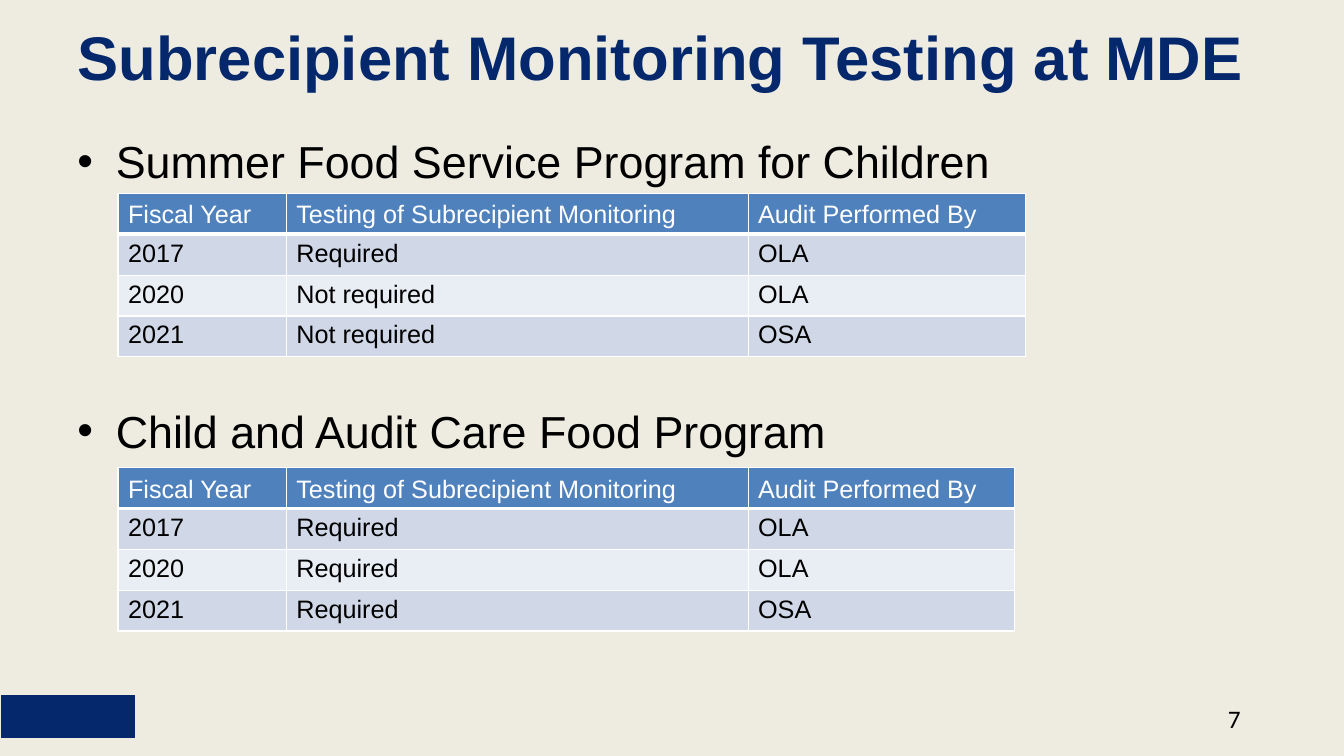
import pptx
import pptx.dml.color
import pptx.enum.shapes
import pptx.enum.text
import pptx.oxml
import pptx.oxml.ns
import pptx.util

EMU_PER_PX = 9144  # 100 px to the inch
ANCHOR = pptx.enum.text.MSO_ANCHOR

HEADER = ("Fiscal Year", "Testing of Subrecipient Monitoring", "Audit Performed By")
SUMMER_ROWS = [
    HEADER,
    ("2017", "Required", "OLA"),
    ("2020", "Not required", "OLA"),
    ("2021", "Not required", "OSA"),
]
CHILD_CARE_ROWS = [
    HEADER,
    ("2017", "Required", "OLA"),
    ("2020", "Required", "OLA"),
    ("2021", "Required", "OSA"),
]


def px(length):
    return pptx.util.Emu(length * EMU_PER_PX)


def color(value):
    return pptx.dml.color.RGBColor.from_string(value)


def xml(tag, content="", **attributes):
    """Parse one DrawingML element."""
    listed = "".join(f' {name}="{value}"' for name, value in attributes.items())
    namespace = pptx.oxml.ns.nsdecls("a")
    return pptx.oxml.parse_xml(f"<a:{tag} {namespace}{listed}>{content}</a:{tag}>")


def write(para, text, size=18, font="Arial", ink="000000", bold=False):
    span = para.add_run()
    span.text = text
    span.font.size = pptx.util.Pt(size)
    span.font.name = font
    span.font.bold = bold
    span.font.color.rgb = color(ink)


class Page:
    navy, paper, white = "04286B", "EEECE1", "FFFFFF"
    header_fill, bands = "4F81BD", ("E9EDF4", "D0D8E8")

    def __init__(self, deck):
        self.slide = deck.slides.add_slide(deck.slide_layouts[5])
        self.slide.background.fill.solid()
        self.slide.background.fill.fore_color.rgb = color(self.paper)

    def title(self, text, left, top, width, height):
        box = self.slide.shapes.title
        box.left, box.top, box.width, box.height = map(px, (left, top, width, height))
        frame = box.text_frame
        frame.auto_size = pptx.enum.text.MSO_AUTO_SIZE.NONE
        frame.vertical_anchor = ANCHOR.MIDDLE
        para = frame.paragraphs[0]
        para.alignment = pptx.enum.text.PP_ALIGN.LEFT
        write(para, text, size=44, ink=self.navy, bold=True)

    def text_frame(self, left, top, width, height):
        box = self.slide.shapes.add_textbox(*map(px, (left, top, width, height)))
        box.text_frame.word_wrap = True
        return box.text_frame

    def bullets(self, items, *place):
        """Write (text, points of space before) pairs as one bulleted list."""
        frame = self.text_frame(*place)
        for index, (text, space) in enumerate(items):
            para = frame.add_paragraph() if index else frame.paragraphs[0]
            para.space_before = pptx.util.Pt(space)
            properties = para._p.get_or_add_pPr()
            properties.set("marL", str(px(38)))
            properties.set("indent", str(px(-38)))
            properties.append(xml("buFont", typeface="Arial"))
            properties.append(xml("buChar", char="•"))
            write(para, text, size=32)

    def number(self, text, *place):
        write(self.text_frame(*place).paragraphs[0], text, font="Calibri")

    def emblem(self, left, top, width, height):
        shape = self.slide.shapes.add_shape(
            pptx.enum.shapes.MSO_SHAPE.RECTANGLE, *map(px, (left, top, width, height)))
        shape.shadow.inherit = False
        shape.fill.solid()
        shape.fill.fore_color.rgb = color(self.navy)
        shape.line.color.rgb = color(self.paper)
        shape.line.width = pptx.util.Pt(1.25)

    def borders(self, cell, top, bottom):
        """Draw white cell borders; top and bottom widths are in points."""
        properties = cell._tc.get_or_add_tcPr()
        paint = f'<a:solidFill><a:srgbClr val="{self.white}"/></a:solidFill>'
        for side, width in (("L", 1), ("R", 1), ("T", top), ("B", bottom)):
            properties.append(xml(f"ln{side}", paint, w=int(pptx.util.Pt(width))))

    def table(self, rows, widths, left, top, height):
        frame = self.slide.shapes.add_table(
            len(rows), len(widths), *map(px, (left, top, sum(widths), height)))
        table = frame.table
        for column, width in zip(table.columns, widths):
            column.width = px(width)
        for row, texts in enumerate(rows):
            heading = row == 0
            for column, text in enumerate(texts):
                cell = table.cell(row, column)
                self.borders(cell, top=3 if row == 1 else 1, bottom=3 if heading else 1)
                cell.fill.solid()
                cell.fill.fore_color.rgb = color(
                    self.header_fill if heading else self.bands[row % 2])
                cell.vertical_anchor = ANCHOR.BOTTOM if heading else ANCHOR.TOP
                write(cell.text_frame.paragraphs[0], text,
                      ink=self.white if heading else "000000")


def main():
    deck = pptx.Presentation()
    deck.slide_width, deck.slide_height = px(1333), px(750)
    page = Page(deck)
    page.emblem(0, 689, 135, 44)
    page.title("Subrecipient Monitoring Testing at MDE", 67, 8, 1200, 95)
    page.bullets([
        ("Summer Food Service Program for Children", 3),
        ("Child and Audit Care Food Program", 154),
    ], 67, 128, 1200, 495)
    page.table(SUMMER_ROWS, (167, 458, 275), 117, 192, 162)
    page.table(CHILD_CARE_ROWS, (167, 458, 264), 117, 464, 162)
    page.number("7", 1208, 693, 67, 40)
    deck.save("out.pptx")


if __name__ == "__main__":
    main()
